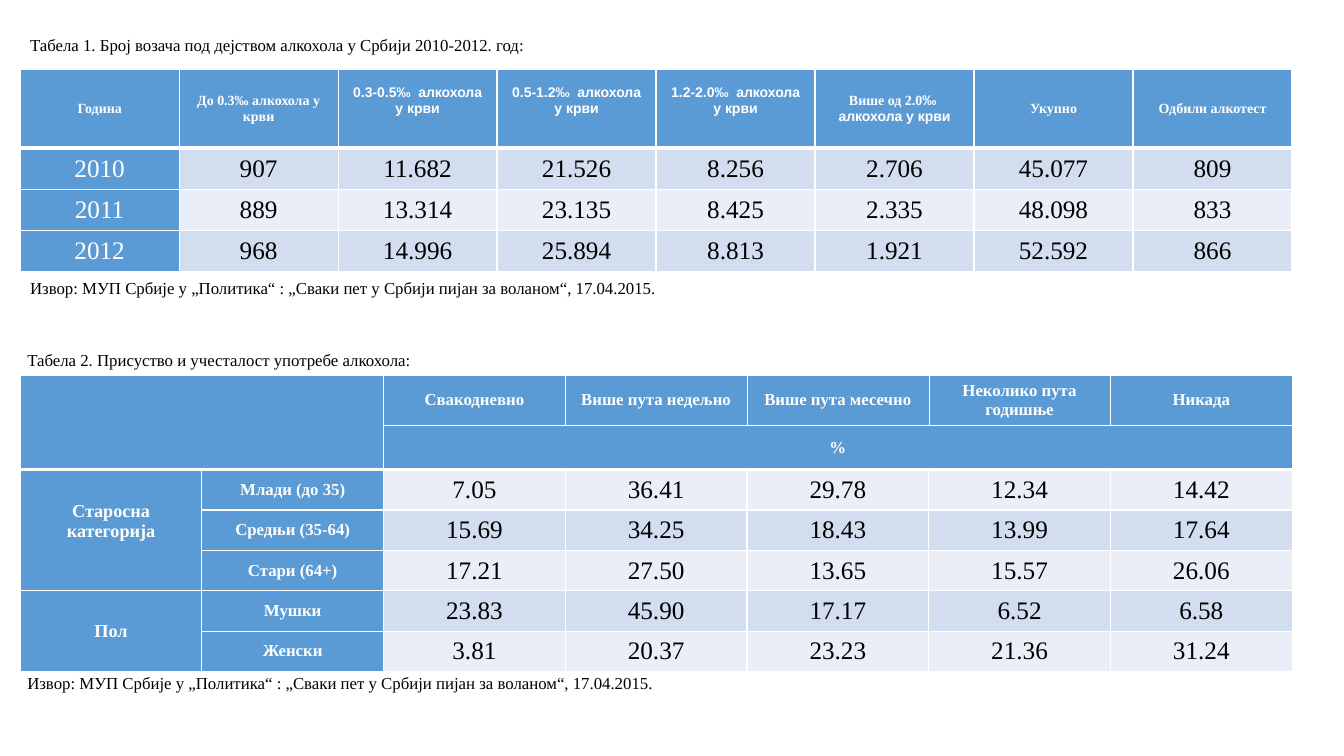
import pptx
import pptx.util
import pptx.dml.color
import pptx.enum.text
import pptx.oxml
import pptx.oxml.ns

Pt = pptx.util.Pt
RGB = pptx.dml.color.RGBColor
BLUE = RGB(0x5B, 0x9B, 0xD5)
PALE = RGB(0xEA, 0xEF, 0xF7)
DEEP = RGB(0xD2, 0xDE, 0xEF)
WHITE = RGB(0xFF, 0xFF, 0xFF)
BLACK = RGB(0, 0, 0)
SERIF = "Times New Roman"
SANS = "Arial"
MIDDLE = pptx.enum.text.MSO_ANCHOR.MIDDLE
CENTER = pptx.enum.text.PP_ALIGN.CENTER

SOURCE = "Извор: МУП Србије у „Политика“ : „Сваки пет у Србији пијан за воланом“, 17.04.2015."
DRIVERS = [
    ["Година", "До 0.3‰ алкохола у крви", "0.3-0.5‰  алкохола у крви",
     "0.5-1.2‰  алкохола у крви", "1.2-2.0‰  алкохола у крви",
     "Више од 2.0|‰  алкохола у крви", "Укупно", "Одбили алкотест"],
    ["2010", "907", "11.682", "21.526", "8.256", "2.706", "45.077", "809"],
    ["2011", "889", "13.314", "23.135", "8.425", "2.335", "48.098", "833"],
    ["2012", "968", "14.996", "25.894", "8.813", "1.921", "52.592", "866"],
]
HABITS = [
    ["", "", "Свакодневно", "Више пута недељно", "Више пута месечно",
     "Неколико пута годишње", "Никада"],
    ["", "", "%", "", "", "", ""],
    ["Старосна категорија", "Млади (до 35)", "7.05", "36.41", "29.78", "12.34", "14.42"],
    ["", "Средњи (35-64)", "15.69", "34.25", "18.43", "13.99", "17.64"],
    ["", "Стари (64+)", "17.21", "27.50", "13.65", "15.57", "26.06"],
    ["Пол", "Мушки", "23.83", "45.90", "17.17", "6.52", "6.58"],
    ["", "Женски", "3.81", "20.37", "23.23", "21.36", "31.24"],
]


def apply(item, look):
    for key, value in look.items():
        setattr(item, key, value)


def write(para, text, face, size, color, bold=False):
    run = para.add_run()
    run.text = text
    apply(run.font, {"name": face, "size": Pt(size), "bold": bold})
    run.font.color.rgb = color


def edge(cell, widths):
    props = cell._tc.get_or_add_tcPr()
    for side, width in zip("LRTB", widths):
        props.append(pptx.oxml.parse_xml(
            f'<a:ln{side} {pptx.oxml.ns.nsdecls("a")} w="{Pt(width)}">'
            f'<a:solidFill><a:srgbClr val="{WHITE}"/></a:solidFill></a:ln{side}>'))


def captions(slide, box, title, gap):
    frame = slide.shapes.add_textbox(*map(Pt, box)).text_frame
    frame.word_wrap = True
    write(frame.paragraphs[0], title, SERIF, 12, BLACK)
    foot = frame.add_paragraph()
    foot.space_before = Pt(gap)
    write(foot, SOURCE, SERIF, 12, BLACK)


def grid(slide, box, data, heights, heads, labels, bands, thin, thick, style, spans=()):
    cols = len(data[0])
    table = slide.shapes.add_table(len(data), cols, *map(Pt, box)).table
    apply(table, {"first_row": False, "horz_banding": False})
    for col in table.columns:
        col.width = Pt(box[2] / cols)
    for row, height in zip(table.rows, heights):
        row.height = Pt(height)
    for top, left, bottom, right in spans:
        table.cell(top, left).merge(table.cell(bottom, right))
    for i, line in enumerate(data):
        for j, text in enumerate(line):
            cell = table.cell(i, j)
            head = i < heads
            label = head or j < labels
            side = thin if head else 1
            last = i + max(cell.span_height, 1) == heads
            edge(cell, (side, side, thick if i == heads else side, thick if last else side))
            cell.fill.solid()
            cell.fill.fore_color.rgb = BLUE if label else bands[(i - heads) % 2]
            if not text:
                continue
            size, bold, lift = style(i, j)
            apply(cell, {"vertical_anchor": MIDDLE, "margin_bottom": Pt(3.6 + lift)})
            para = cell.text_frame.paragraphs[0]
            para.alignment = CENTER
            parts = text.split("|")
            for k, part in enumerate(parts):
                face = SANS if lift and labels == 1 or k else SERIF
                write(para, part, face, size, WHITE if label else BLACK, bold)


def driver_style(i, j):
    if i:
        return 18, False, 0
    return 10, True, 12 if 2 <= j <= 4 else 0


def habit_style(i, j):
    if i > 1 and j > 1:
        return 18, False, 0
    if i > 1 and j == 0:
        return 13, True, 13 if i == 2 else 0
    return 12, True, 0


def drivers(slide, box):
    x, y, w, h = box
    captions(slide, (x, y, 800.6, 218),
             "Табела 1. Број возача под дејством алкохола у Србији 2010-2012. год:", 159)
    grid(slide, (x, y + 28, w, h), DRIVERS, [56.2] + [29.5] * 3, 1, 1,
         (DEEP, PALE), 1, 3, driver_style)


def habits(slide, box):
    x, y, w, h = box
    grid(slide, (x, y + 21.6, w, h), HABITS, [36, 31.7] + [28.8] * 5, 2, 2,
         (PALE, DEEP), 0.25, 2.25, habit_style,
         [(0, 0, 1, 1), (1, 2, 1, 6), (2, 0, 4, 0), (5, 0, 6, 0)])
    captions(slide, (x - 2, y, 800.6, 276.5),
             "Табела 2. Присуство и учесталост употребе алкохола:", 216.2)


def main():
    deck = pptx.Presentation()
    apply(deck, {"slide_width": Pt(960), "slide_height": Pt(540)})
    slide = deck.slides.add_slide(deck.slide_layouts[6])
    drivers(slide, (14.4, 21.6, 908.6, 144.7))
    habits(slide, (14.4, 246.2, 908.6, 211.7))
    deck.save("out.pptx")


if __name__ == "__main__":
    main()
